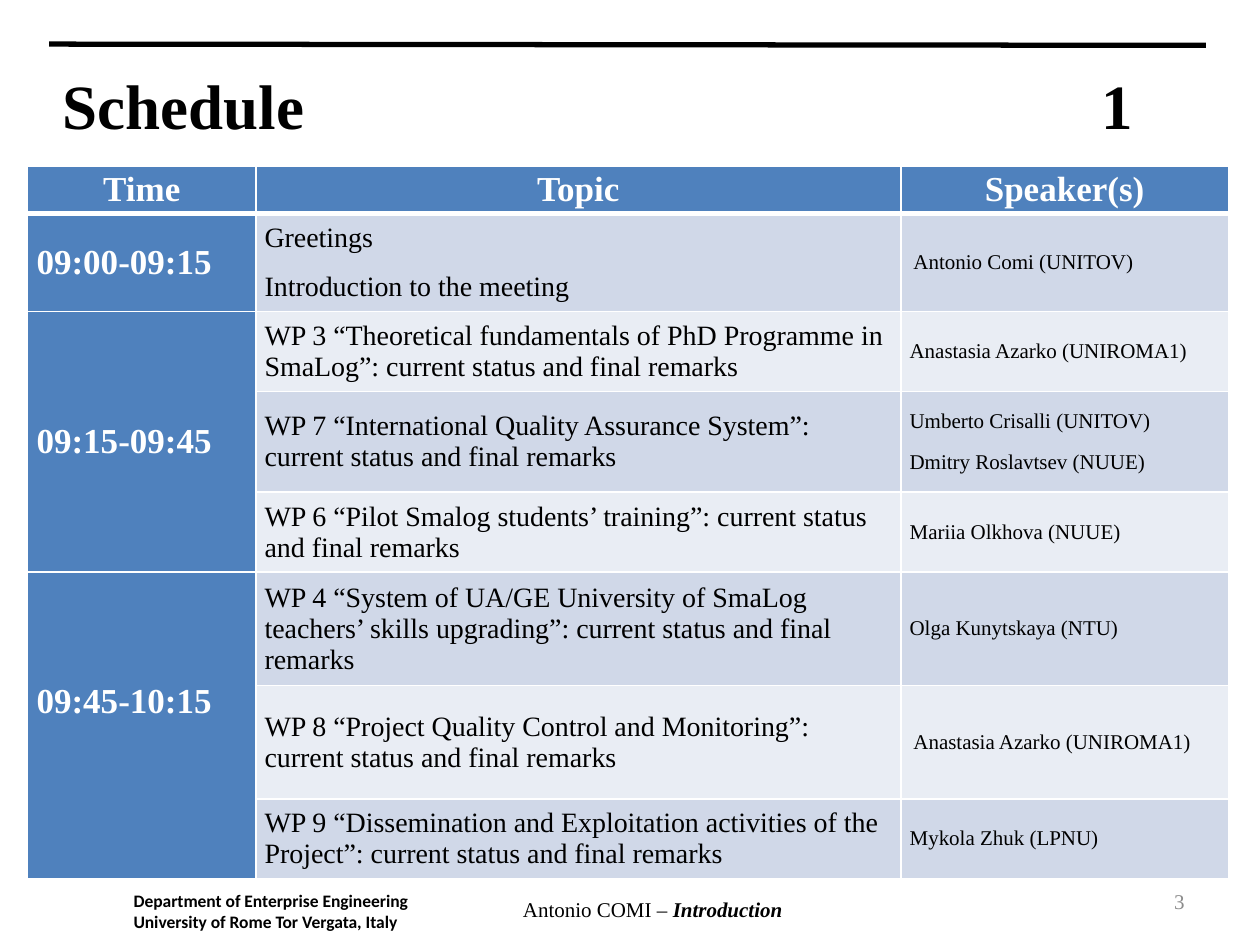
from lxml import etree
from pptx import Presentation
from pptx.dml.color import RGBColor
from pptx.enum import shapes, text
from pptx.oxml import ns
from pptx.util import Inches, Pt

BLACK, WHITE, GREY = "000000", "FFFFFF", "8C8C8C"
BLUE, DARK_BAND, LIGHT_BAND = "4F81BD", "D0D8E8", "E9EDF4"
LEFT, CENTER, RIGHT = text.PP_ALIGN.LEFT, text.PP_ALIGN.CENTER, text.PP_ALIGN.RIGHT
MIDDLE, TOP = text.MSO_ANCHOR.MIDDLE, text.MSO_ANCHOR.TOP


def color(hex_string):
    return RGBColor.from_string(hex_string)


def write(frame, lines, size=12, font="Times New Roman", fill=BLACK, bold=False,
          align=LEFT, gap=0, indent=0, tab=None):
    """Fill a text frame; a line is a string or a list of (string, emphasised) runs."""
    frame.word_wrap = True
    for number, line in enumerate(lines):
        paragraph = frame.add_paragraph() if number else frame.paragraphs[0]
        paragraph.alignment = align
        paragraph.space_before = Pt(gap if number else 0)
        paragraph.space_after = Pt(gap)
        properties = paragraph._p.get_or_add_pPr()
        if indent:
            properties.set("indent", str(Inches(indent)))
        if tab:
            tabs = etree.SubElement(properties, ns.qn("a:tabLst"))
            etree.SubElement(tabs, ns.qn("a:tab"), pos=str(Inches(tab)), algn="l")
        for words, emphasised in [(line, False)] if isinstance(line, str) else line:
            run = paragraph.add_run()
            run.text = words
            run.font.size, run.font.name = Pt(size), font
            run.font.bold, run.font.italic = bold or emphasised, emphasised
            run.font.color.rgb = color(fill)


deck = Presentation()
deck.slide_width, deck.slide_height = Inches(10), Inches(7.5)
slide = deck.slides.add_slide(deck.slide_layouts[6])

# Rules above the title and below the table
for x1, y1, x2, y2 in [(0.38, 6.9, 9.56, 6.92), (0.39, 0.35, 9.57, 0.36)]:
    rule = slide.shapes.add_connector(shapes.MSO_CONNECTOR.STRAIGHT, Inches(x1),
                                      Inches(y1), Inches(x2), Inches(y2))
    rule.line.color.rgb = color(BLACK)
    rule.line.width = Pt(3)
    etree.SubElement(rule._element.spPr, ns.qn("a:effectLst"))

# Title and footer
captions = [
    ((0.4, 0.43, 9.16, 0.8), ["Schedule\t1"], MIDDLE, dict(size=36, bold=True, tab=8.24)),
    ((1.06, 7.06, 2.58, 0.33),
     ["Department of Enterprise Engineering", "University of Rome Tor Vergata, Italy"],
     TOP, dict(size=10, font="Calibri", bold=True)),
    ((3.19, 7.07, 3.98, 0.5), [[("Antonio COMI – ", False), ("Introduction", True)]],
     TOP, dict(align=CENTER)),
    ((7.17, 6.95, 2.33, 0.4), ["3"], MIDDLE, dict(fill=GREY, align=RIGHT)),
]
for place, lines, anchor, style in captions:
    frame = slide.shapes.add_textbox(*map(Inches, place)).text_frame
    frame.vertical_anchor = anchor
    if len(lines) > 1:
        frame.margin_left = frame.margin_right = 0
        frame.margin_top = frame.margin_bottom = 0
    write(frame, lines, **style)

# Schedule: time (blank when the slot above continues), topics, speakers, speaker indent
headings = ["Time", "Topic", "Speaker(s)"]
sessions = [
    ("09:00-09:15", ["Greetings", "Introduction to the meeting"],
     ["Antonio Comi (UNITOV)"], 0.03),
    ("09:15-09:45", ["WP 3 “Theoretical fundamentals of PhD Programme in SmaLog”: "
                     "current status and final remarks"],
     ["Anastasia Azarko (UNIROMA1)"], 0),
    ("", ["WP 7 “International Quality Assurance System”: current status and final remarks"],
     ["Umberto Crisalli (UNITOV)", "Dmitry Roslavtsev (NUUE)"], 0),
    ("", ["WP 6 “Pilot Smalog students’ training”: current status and final remarks"],
     ["Mariia Olkhova (NUUE)"], 0),
    ("09:45-10:15", ["WP 4 “System of UA/GE University of SmaLog teachers’ skills "
                     "upgrading”: current status and final remarks"],
     ["Olga Kunytskaya (NTU)"], 0),
    ("", ["WP 8 “Project Quality Control and Monitoring”: current status and final remarks"],
     ["Anastasia Azarko (UNIROMA1)"], 0.03),
    ("", ["WP 9 “Dissemination and Exploitation activities of the Project”: "
          "current status and final remarks"],
     ["Mykola Zhuk (LPNU)"], 0),
]
widths = [1.81, 5.12, 2.6]
heights = [0.35, 0.78, 0.61, 0.8, 0.61, 0.86, 0.9, 0.61]
schedule = slide.shapes.add_table(len(heights), len(widths), Inches(0.22), Inches(1.32),
                                  Inches(sum(widths)), Inches(sum(heights))).table
for column, width in zip(schedule.columns, widths):
    column.width = Inches(width)
for row, height in zip(schedule.rows, heights):
    row.height = Inches(height)

for r in range(len(heights)):
    for c in range(len(widths)):
        cell = schedule.cell(r, c)
        cell.vertical_anchor = MIDDLE
        cell.margin_left = cell.margin_right = Inches(0.07)
        cell.margin_top = cell.margin_bottom = Inches(0.05 if r else 0.02)
        borders = cell._tc.get_or_add_tcPr()
        for side in ("L", "R", "T", "B"):
            thick = (r == 0 and side == "B") or (r == 1 and side == "T")
            edge = etree.SubElement(borders, ns.qn(f"a:ln{side}"), w=str(Pt(3 if thick else 1)))
            paint = etree.SubElement(edge, ns.qn("a:solidFill"))
            etree.SubElement(paint, ns.qn("a:srgbClr"), val=WHITE)
        cell.fill.solid()
        band = DARK_BAND if r % 2 else LIGHT_BAND
        cell.fill.fore_color.rgb = color(BLUE if r == 0 or c == 0 else band)

for c, heading in enumerate(headings):
    write(schedule.cell(0, c).text_frame, [heading], size=20, fill=WHITE, bold=True,
          align=CENTER, gap=5)
for r, (time, topics, speakers, indent) in enumerate(sessions, 1):
    if time:
        write(schedule.cell(r, 0).text_frame, [time], size=20, fill=WHITE, bold=True, gap=5)
    write(schedule.cell(r, 1).text_frame, topics, size=16, gap=5)
    write(schedule.cell(r, 2).text_frame, speakers, gap=5, indent=indent)

for first, last in [(2, 4), (5, 7)]:
    schedule.cell(first, 0).merge(schedule.cell(last, 0))
schedule.cell(5, 0).margin_bottom = Inches(0.43)  # the last time sits above the middle

deck.save("out.pptx")
